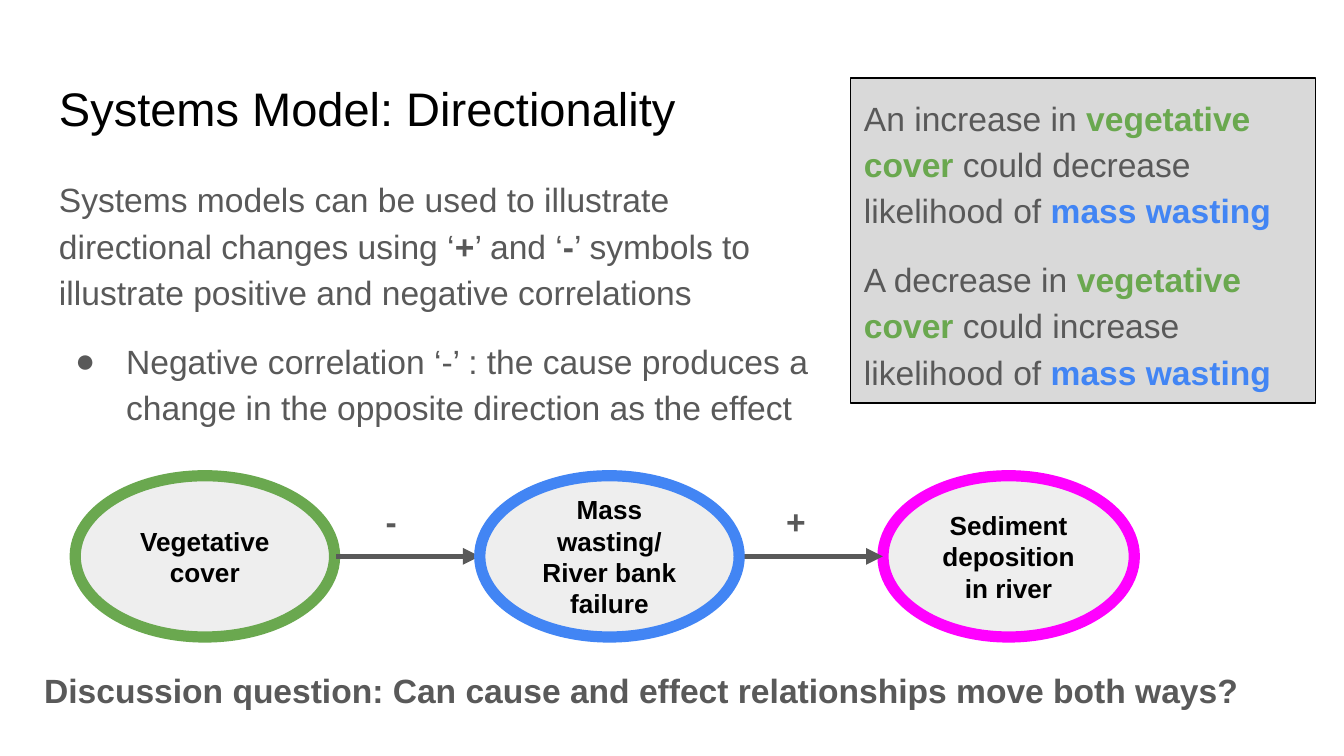
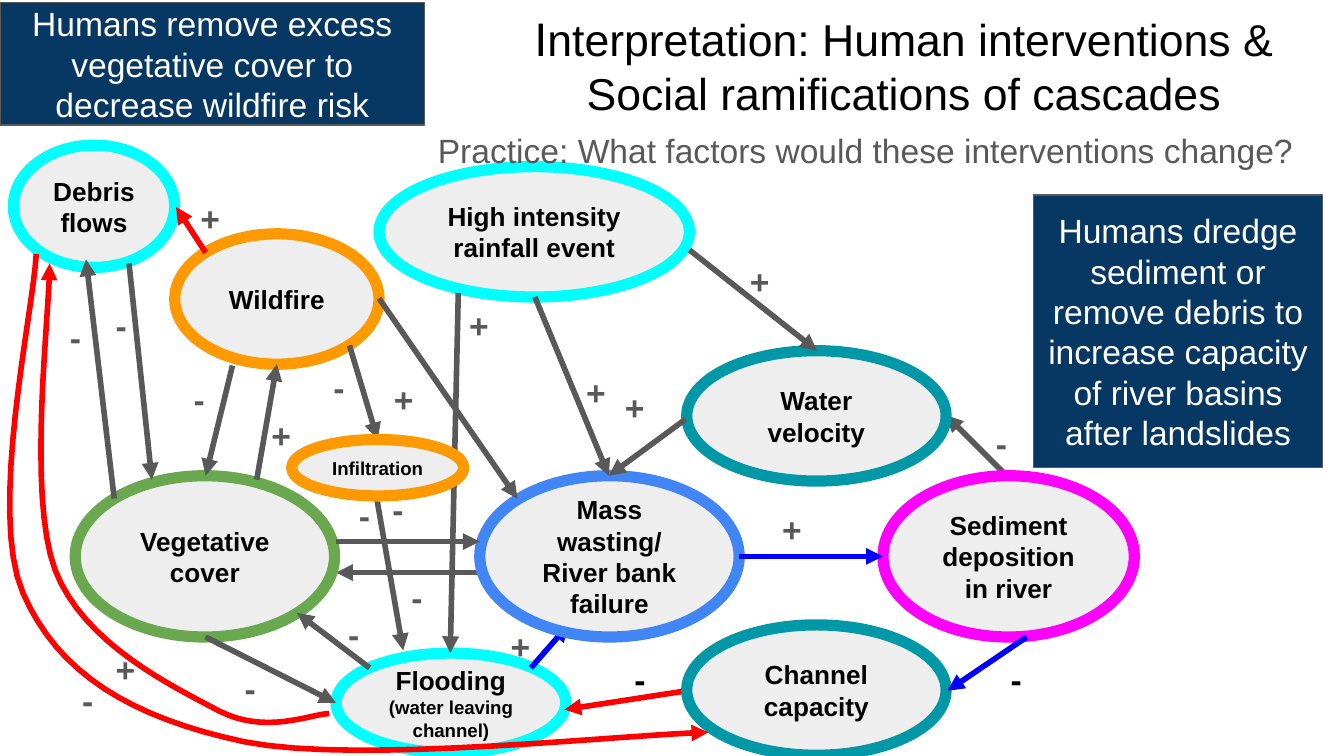
from lxml.etree import SubElement
from pptx import Presentation
from pptx.dml.color import RGBColor
from pptx.enum.shapes import MSO_CONNECTOR, MSO_SHAPE
from pptx.enum.text import MSO_ANCHOR, PP_ALIGN
from pptx.oxml.ns import qn
from pptx.util import Inches, Pt

GRID = Inches(0.1)
COLUMNS, ROWS = 100, 56.25

THEME = {
    "font": "Arial",
    "grey": "595959", "black": "000000", "white": "FFFFFF", "navy": "073763",
    "panel": "D9D9D9", "node": "EEEEEE", "green": "6AA84F", "azure": "4285F4",
    "magenta": "FF00FF", "teal": "0097A7", "cyan": "00FFFF", "orange": "FF9900",
    "red": "FF0000", "blue": "0000FF",
    "title": 25.2, "long title": 23.9, "body": 18, "label": 14, "small": 10,
    "arrow": 3, "ring": 6, "border": 0.75,
}

CENTRED = {"alignment": PP_ALIGN.CENTER}
SPACED = {"line_spacing": 1.15}
STYLES = {
    "title": {"size": "title", "colour": "black"},
    "centred title": {"size": "long title", "colour": "black", "paragraph": CENTRED},
    "body": {"size": "body", "colour": "grey", "paragraph": SPACED},
    "question": {"size": "body", "colour": "grey", "bold": True, "paragraph": SPACED},
    "sign": {"size": "body", "colour": "grey", "bold": True, "frame": {"margin_left": GRID * 1.7}},
    "panel": {"preset": MSO_SHAPE.RECTANGLE, "fill": "panel", "line": "black", "width": "border",
              "size": "body", "colour": "grey",
              "paragraph": {**SPACED, "alignment": PP_ALIGN.LEFT},
              "frame": {"vertical_anchor": MSO_ANCHOR.TOP}},
    "action": {"preset": MSO_SHAPE.RECTANGLE, "fill": "navy", "line": "grey", "width": "border",
               "size": "body", "colour": "white", "paragraph": CENTRED,
               "frame": {"vertical_anchor": MSO_ANCHOR.MIDDLE}},
    "node": {"preset": MSO_SHAPE.OVAL, "fill": "node", "width": "ring",
             "size": "label", "colour": "black", "bold": True, "paragraph": CENTRED,
             "frame": {"vertical_anchor": MSO_ANCHOR.MIDDLE}},
}

NODES = {
    "vegetation": (5.6, 35.4, 19.3, 12, "green", ["Vegetative cover"]),
    "mass wasting": (35.7, 35.4, 19.3, 12, "azure", ["Mass wasting/ River bank failure"]),
    "sediment": (65.7, 35.4, 18.7, 12, "magenta", ["Sediment deposition in river"]),
    "velocity": (51.1, 26.1, 19.3, 9.7, "teal", ["Water velocity"]),
    "capacity": (51.1, 46.5, 19.3, 9.7, "teal", ["Channel capacity"]),
    "flooding": (25, 48.6, 17.1, 7.4, "cyan",
                 ["Flooding ", ("(water leaving channel)", {"size": "small"})]),
    "rainfall": (28.2, 12.4, 23.1, 9.7, "cyan", ["High intensity rainfall event"]),
    "debris": (1, 10.8, 12, 9.1, "cyan", ["Debris flows"]),
    "wildfire": (13, 17.4, 15.2, 9.7, "orange", ["Wildfire"]),
    "infiltration": (21.7, 32.7, 12.8, 4.2, "orange", [("Infiltration", {"size": "small"})]),
}

GREEN = {"colour": "green", "bold": True}
AZURE = {"colour": "azure", "bold": True}
BOLD = {"bold": True}


def add_box(slide, style_name, box, paragraphs, line=None):
    style = STYLES[style_name]
    lengths = [round(GRID * value) for value in box]
    if "preset" in style:
        shape = slide.shapes.add_shape(style["preset"], *lengths)
        shape.shadow.inherit = False
        shape.fill.solid()
        shape.fill.fore_color.rgb = RGBColor.from_string(THEME[style["fill"]])
        shape.line.color.rgb = RGBColor.from_string(THEME[line or style["line"]])
        shape.line.width = Pt(THEME[style["width"]])
    else:
        shape = slide.shapes.add_textbox(*lengths)
    frame = shape.text_frame
    margins = dict.fromkeys(("margin_left", "margin_right", "margin_top", "margin_bottom"), GRID)
    for name, value in {"word_wrap": True, **margins, **style.get("frame", {})}.items():
        setattr(frame, name, round(value) if name in margins else value)
    for index, runs in enumerate(paragraphs):
        paragraph = frame.add_paragraph() if index else frame.paragraphs[0]
        for name, value in style.get("paragraph", {}).items():
            setattr(paragraph, name, value)
        for item in runs:
            text, changes = (item, {}) if isinstance(item, str) else item
            look = {"bold": False, **style, **changes}
            run = paragraph.add_run()
            run.text = text
            values = {"name": THEME["font"], "size": Pt(THEME[look["size"]]), "bold": look["bold"]}
            for name, value in values.items():
                setattr(run.font, name, value)
            run.font.color.rgb = RGBColor.from_string(THEME[look["colour"]])
    return shape


def finish_arrow(shape, colour):
    shape.line.color.rgb = RGBColor.from_string(THEME[colour])
    shape.line.width = Pt(THEME["arrow"])
    properties = shape._element.spPr
    SubElement(properties.find(qn("a:ln")), qn("a:tailEnd"), type="triangle")
    SubElement(properties, qn("a:effectLst"))


presentation = Presentation()
presentation.slide_width = round(GRID * COLUMNS)
presentation.slide_height = round(GRID * ROWS)
directionality, interventions = [
    presentation.slides.add_slide(presentation.slide_layouts[6]) for _ in range(2)
]

DIAGRAMS = [
    (directionality, [
        ([], ["vegetation", "sediment"]),
        ([(55, 41.4, 65.7, 41.4, "grey"), (25, 41.4, 35.7, 41.4, "grey")], ["mass wasting"]),
    ], [], [
        (27, 36.3, "-", "grey"), (56.8, 36.3, "+", "grey"),
    ]),
    (interventions, [
        ([
            (35.7, 42.6, 25, 42.6, "grey"),
            (75, 35.5, 70.4, 30.9, "grey"),
        ], ["vegetation", "velocity", "sediment", "flooding"]),
        ([(51.1, 51.4, 42, 52.8, "red")], ["capacity", "rainfall", "debris", "wildfire"]),
        ([
            (39.5, 49.7, 42.3, 46.5, "blue"),
            (17.3, 27.2, 15.3, 35.4, "grey"),
            (19.1, 35.7, 20.6, 27.1, "grey"),
            (51.3, 18.6, 60.8, 26.1, "grey"),
            (34.1, 21.8, 33.5, 48.6, "grey"),
            (15.3, 47.4, 25, 52.3, "grey"),
            (27.5, 49.7, 22.1, 45.6, "grey"),
            (15.3, 18.8, 13.1, 15.4, "red"),
            (28, 36.9, 30, 48.4, "grey"),
            (26, 25.7, 28.1, 32.7, "grey"),
            (9.6, 19.6, 11.3, 35.7, "grey"),
            (8.5, 37.1, 6.4, 19.3, "grey"),
        ], ["mass wasting", "infiltration"]),
        ([
            (55, 41.4, 65.7, 41.4, "blue"),
            (25, 40.3, 35.7, 40.3, "grey"),
            (51, 31.2, 45.3, 35.4, "grey"),
            (76.4, 47.4, 70.5, 51.4, "blue"),
            (39.8, 22.1, 45.3, 35.4, "grey"),
            (28.2, 22.2, 38.5, 37.1, "grey"),
        ], []),
    ], [
        [(2.7, 18.9), (2.5, 23.1), (-0.9, 38.1), (1.7, 44.1), (4.3, 50.1), (9.7, 53.4),
         (18.2, 55.2), (26.7, 56.9), (46.9, 54.6), (52.7, 54.5)],
        [(24.5, 53.1), (23.2, 53.1), (19.8, 54.7), (16.3, 52.9), (12.9, 51.1), (6.2, 47.9),
         (4.1, 42.4), (2, 36.8), (3.7, 23.4), (3.7, 19.6)],
    ], [
        (56.5, 36.9, "+", "grey"), (27.5, 35.4, "-", "grey"), (28.9, 41.9, "-", "grey"),
        (72.4, 30.5, "-", "grey"), (44.8, 27.8, "+", "grey"), (36.3, 45.6, "+", "grey"),
        (45.5, 48, "-", "black"), (73.5, 48, "-", "black"), (12.7, 27.2, "-", "grey"),
        (18.5, 29.9, "+", "grey"), (41.9, 26.7, "+", "grey"), (54.1, 18.4, "+", "grey"),
        (33.2, 21.7, "+", "grey"), (16.5, 48.7, "-", "grey"), (24.2, 44.7, "-", "grey"),
        (13.2, 13.7, "+", "grey"), (4.4, 49.6, "-", "grey"), (27.6, 27.2, "+", "grey"),
        (23.1, 26.3, "-", "grey"), (3.5, 22.6, "-", "grey"), (6.9, 21.7, "-", "grey"),
        (6.9, 47.3, "+", "grey"), (25, 35.8, "-", "grey"),
    ]),
]

for slide, layers, curves, signs in DIAGRAMS:
    for arrows, names in layers:
        for *ends, colour in arrows:
            connector = slide.shapes.add_connector(
                MSO_CONNECTOR.STRAIGHT, *[round(GRID * value) for value in ends])
            finish_arrow(connector, colour)
        for name in names:
            *box, colour, runs = NODES[name]
            add_box(slide, "node", box, [runs], colour)
    for points in curves:
        outline = []
        for first in range(0, len(points) - 1, 3):
            for step in range(1, 17):
                t = step / 16
                weights = ((1 - t) ** 3, 3 * t * (1 - t) ** 2, 3 * t ** 2 * (1 - t), t ** 3)
                corners = points[first:first + 4]
                outline.append([
                    round(GRID * sum(weight * corner[axis] for weight, corner in zip(weights, corners)))
                    for axis in (0, 1)
                ])
        builder = slide.shapes.build_freeform(*[round(GRID * value) for value in points[0]])
        builder.add_line_segments(outline, close=False)
        curve = builder.convert_to_shape()
        curve.fill.background()
        finish_arrow(curve, "red")
    for left, top, symbol, colour in signs:
        add_box(slide, "sign", (left, top, 5.2, 5), [[(symbol, {"colour": colour})]])

add_box(directionality, "title", (3.4, 4.9, 93.2, 6.3), [["Systems Model: Directionality"]])
body = add_box(directionality, "body", (3.4, 11.9, 59.2, 36.6), [
    ["Systems models can be used to illustrate directional changes using ‘", ("+", BOLD),
     "’ and ‘", ("-", BOLD), "’ symbols to illustrate positive and negative correlations"],
    ["Negative correlation ‘-’ : the cause produces a change in the opposite direction as the effect"],
])
bullet = body.text_frame.paragraphs[1]
bullet.space_before = Pt(12)
properties = bullet._p.get_or_add_pPr()
properties.set("marL", str(round(GRID * 5)))
properties.set("indent", str(round(GRID * -3.8)))
bullet_colour = SubElement(properties, qn("a:buClr"))
SubElement(bullet_colour, qn("a:srgbClr"), val=THEME["grey"])
SubElement(properties, qn("a:buFont"), typeface=THEME["font"])
SubElement(properties, qn("a:buChar"), char="●")

panel = add_box(directionality, "panel", (63.3, 5.8, 34.6, 24.2), [
    [f"{cause} in ", ("vegetative cover", GREEN), f" could {effect} likelihood of ",
     ("mass wasting", AZURE)]
    for cause, effect in (("An increase", "decrease"), ("A decrease", "increase"))
])
panel.text_frame.paragraphs[1].space_before = Pt(12)
add_box(directionality, "question", (2.3, 48.4, 95, 5),
        [["Discussion question: Can cause and effect relationships move both ways?"]])

add_box(interventions, "centred title", (38.5, -0.3, 57.5, 7.5), [
    [("I", {"size": "title"}), "nterpretation: Human interventions &"],
    ["Social ramifications of cascades"],
])
add_box(interventions, "action", (76.9, 14.5, 21.5, 20.3),
        [["Humans dredge sediment or remove debris to increase capacity of river basins after landslides"]])
add_box(interventions, "action", (0, 0.2, 31.6, 9.1),
        [["Humans remove excess vegetative cover to decrease wildfire risk"]])
add_box(interventions, "body", (31.6, 8.2, 66, 6.3),
        [["Practice: What factors would these interventions change?"]])

presentation.save("out.pptx")
